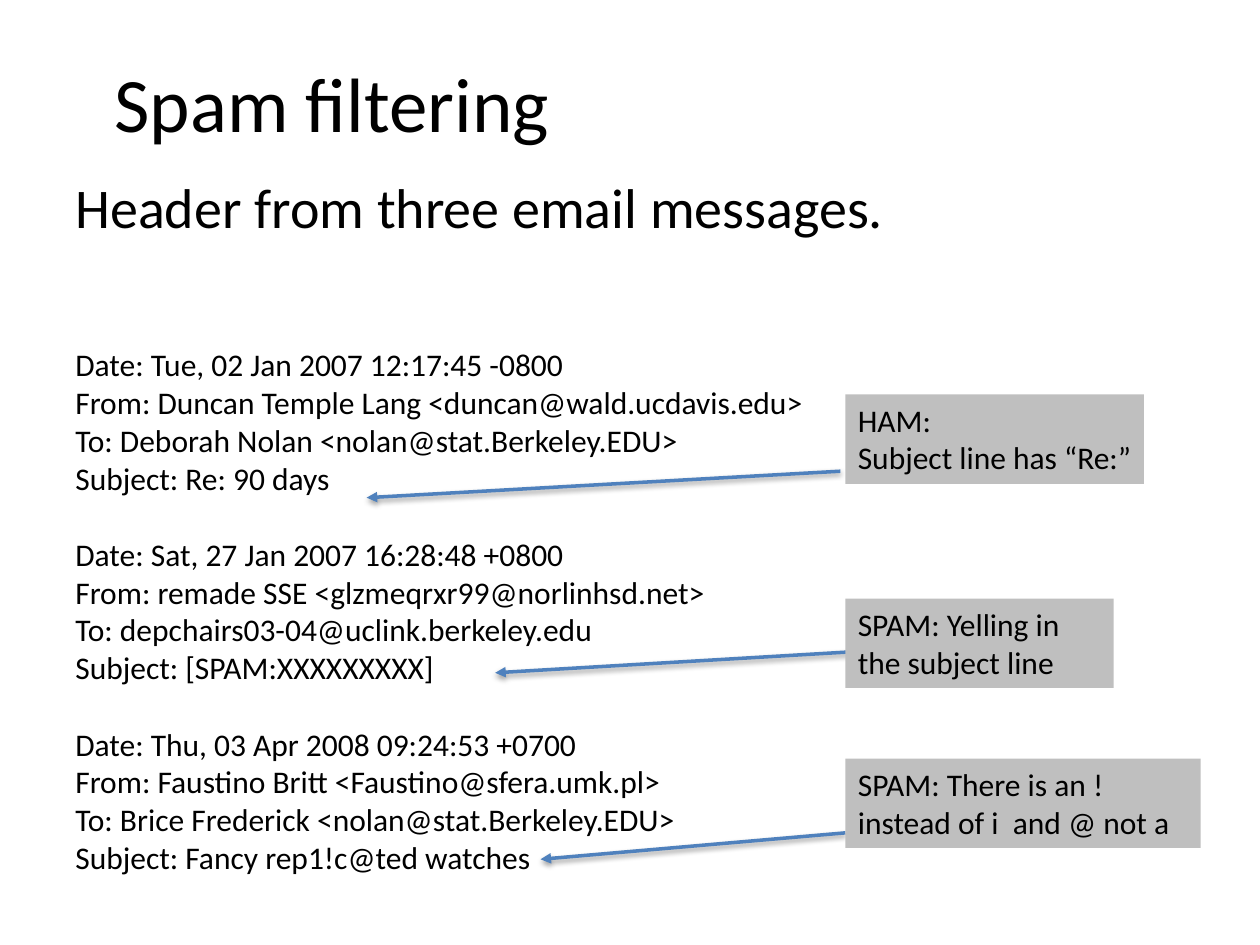
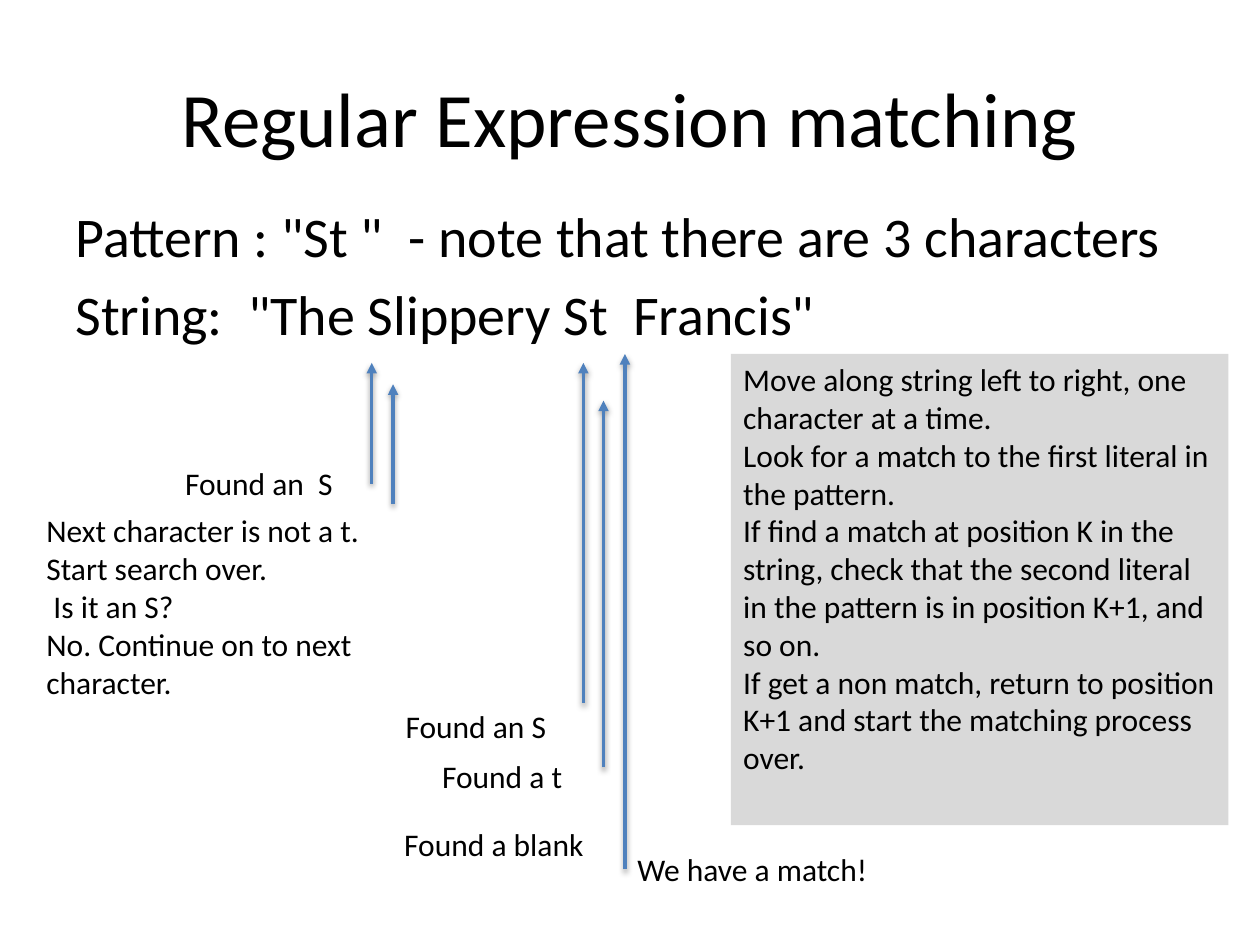
import pptx
import pptx.dml.color
import pptx.enum.shapes
import pptx.enum.text
import pptx.oxml
import pptx.oxml.ns
import pptx.util

Inches = pptx.util.Inches
Pt = pptx.util.Pt
Align = pptx.enum.text.PP_ALIGN
Anchor = pptx.enum.text.MSO_ANCHOR

FONT = "Calibri"
BLACK = "000000"
BLUE = "4F81BD"
GRAY = "BFBFBF"
PALE = "D9D9D9"
NOTE_X = 6.71
NOTE_H = 0.71
SHADOW = (
    '<a:effectLst %s><a:outerShdw blurRad="40000" dist="20000" dir="5400000" '
    'rotWithShape="0"><a:srgbClr val="000000"><a:alpha val="38000"/>'
    "</a:srgbClr></a:outerShdw></a:effectLst>"
)
HEAD = '<a:tailEnd %s type="triangle"/>'

MAILS = [
    ["Date: Tue, 02 Jan 2007 12:17:45 -0800",
     "From: Duncan Temple Lang <duncan@wald.ucdavis.edu>",
     "To: Deborah Nolan <nolan@stat.Berkeley.EDU>",
     "Subject: Re: 90 days"],
    ["Date: Sat, 27 Jan 2007 16:28:48 +0800",
     "From: remade SSE <glzmeqrxr99@norlinhsd.net>",
     "To: depchairs03-04@uclink.berkeley.edu",
     "Subject: [SPAM:XXXXXXXXX]"],
    ["Date: Thu, 03 Apr 2008 09:24:53 +0700",
     "From: Faustino Britt <Faustino@sfera.umk.pl>",
     "To: Brice Frederick <nolan@stat.Berkeley.EDU>",
     "Subject: Fancy rep1!c@ted watches"],
]
NOTES = [
    (3.13, 2.37, ["HAM:", "Subject line has “Re:”"], (6.67, 3.74), (2.91, 3.95)),
    (4.75, 2.13, ["SPAM: Yelling in the subject line"], (7.67, 5.12), (3.93, 5.34)),
    (6.02, 2.82, ["SPAM: There is an ! instead of i  and @ not a"],
     (6.71, 6.61), (4.29, 6.82)),
]
ARROWS = [
    (2.95, 3.84, 2.88),
    (3.12, 4, 3.05),
    (4.63, 5.58, 2.88),
    (4.79, 6.09, 3.18),
    (4.96, 6.9, 2.81),
]
LABELS = [
    (1.37, 3.63, 1.58, "Found an  S"),
    (3.12, 5.56, 1.52, "Found an S"),
    (3.41, 5.96, 1.22, "Found a t"),
    (3.11, 6.5, 1.86, "Found a blank"),
    (4.96, 6.7, 2.27, "We have a match!"),
]
SEARCH = [
    "Next character is not a t.",
    "Start search over.",
    " Is it an S?",
    "No. Continue on to next character.",
]
RULES = [
    "Move along string left to right, one character at a time.",
    "Look for a match to the first literal in the pattern.",
    "If find a match at position K in the string, check that the second literal "
    "in the pattern is in position K+1, and so on.",
    "If get a non match, return to position K+1 and start the matching process over.",
]


def color(code):
    return pptx.dml.color.RGBColor.from_string(code)


def write(shape, lines, size=18, align=Align.LEFT, anchor=Anchor.TOP, gap=0):
    frame = shape.text_frame
    frame.word_wrap = True
    frame.vertical_anchor = anchor
    for i, line in enumerate(lines):
        para = frame.add_paragraph() if i else frame.paragraphs[0]
        para.text = line
        para.alignment = align
        para.space_before = Pt(gap)
        para.font.name = FONT
        para.font.size = Pt(size)
        para.font.color.rgb = color(BLACK)
    return frame


def text(slide, box, lines, **style):
    shape = slide.shapes.add_textbox(*map(Inches, box))
    return write(shape, lines, **style)


def title(slide, box, line):
    text(slide, box, [line], size=44, align=Align.CENTER, anchor=Anchor.MIDDLE)


def body(slide, box, lines):
    text(slide, box, lines, size=32, gap=6.4)


def panel(slide, box, lines, fill):
    kind = pptx.enum.shapes.MSO_SHAPE.RECTANGLE
    shape = slide.shapes.add_shape(kind, *map(Inches, box))
    shape.shadow.inherit = False
    shape.fill.solid()
    shape.fill.fore_color.rgb = color(fill)
    shape.line.fill.background()
    write(shape, lines)


def arrow(slide, start, end):
    kind = pptx.enum.shapes.MSO_CONNECTOR.STRAIGHT
    link = slide.shapes.add_connector(kind, *map(Inches, start + end))
    link.line.color.rgb = color(BLUE)
    link.line.width = Pt(2)
    space = pptx.oxml.ns.nsdecls("a")
    props = link._element.spPr
    props.find(pptx.oxml.ns.qn("a:ln")).append(pptx.oxml.parse_xml(HEAD % space))
    props.append(pptx.oxml.parse_xml(SHADOW % space))


def spam(slide):
    title(slide, (0.5, 0.3, 4.27, 1.02), "Spam ﬁltering")
    body(slide, (0.5, 1.32, 8.79, 0.98), ["Header from three email messages."])
    frame = text(slide, (0.5, 2.69, 6.17, 4.34), sum(MAILS, []))
    for i in range(len(MAILS[0]), len(frame.paragraphs), len(MAILS[0])):
        frame.paragraphs[i].space_before = Pt(22)
    for top, width, lines, start, end in NOTES:
        arrow(slide, start, end)
        panel(slide, (NOTE_X, top, width, NOTE_H), lines, GRAY)


def match(slide):
    title(slide, (0.5, 0.3, 9, 1.25), "Regular Expression matching")
    body(slide, (0.5, 1.55, 9, 5.35), [
        'Pattern : "St "  - note that there are 3 characters',
        'String:  "The Slippery St  Francis"',
    ])
    for x, low, high in ARROWS:
        arrow(slide, (x, low), (x, high))
    for x, y, width, line in LABELS:
        text(slide, (x, y, width, 0.4), [line])
    text(slide, (0.27, 4.01, 2.84, 1.62), SEARCH)
    panel(slide, (5.8, 2.81, 3.95, 3.74), RULES, PALE)


def main():
    deck = pptx.Presentation()
    deck.slide_width = Inches(10)
    deck.slide_height = Inches(7.5)
    for build in (spam, match):
        build(deck.slides.add_slide(deck.slide_layouts[6]))
    deck.save("out.pptx")


if __name__ == "__main__":
    main()
